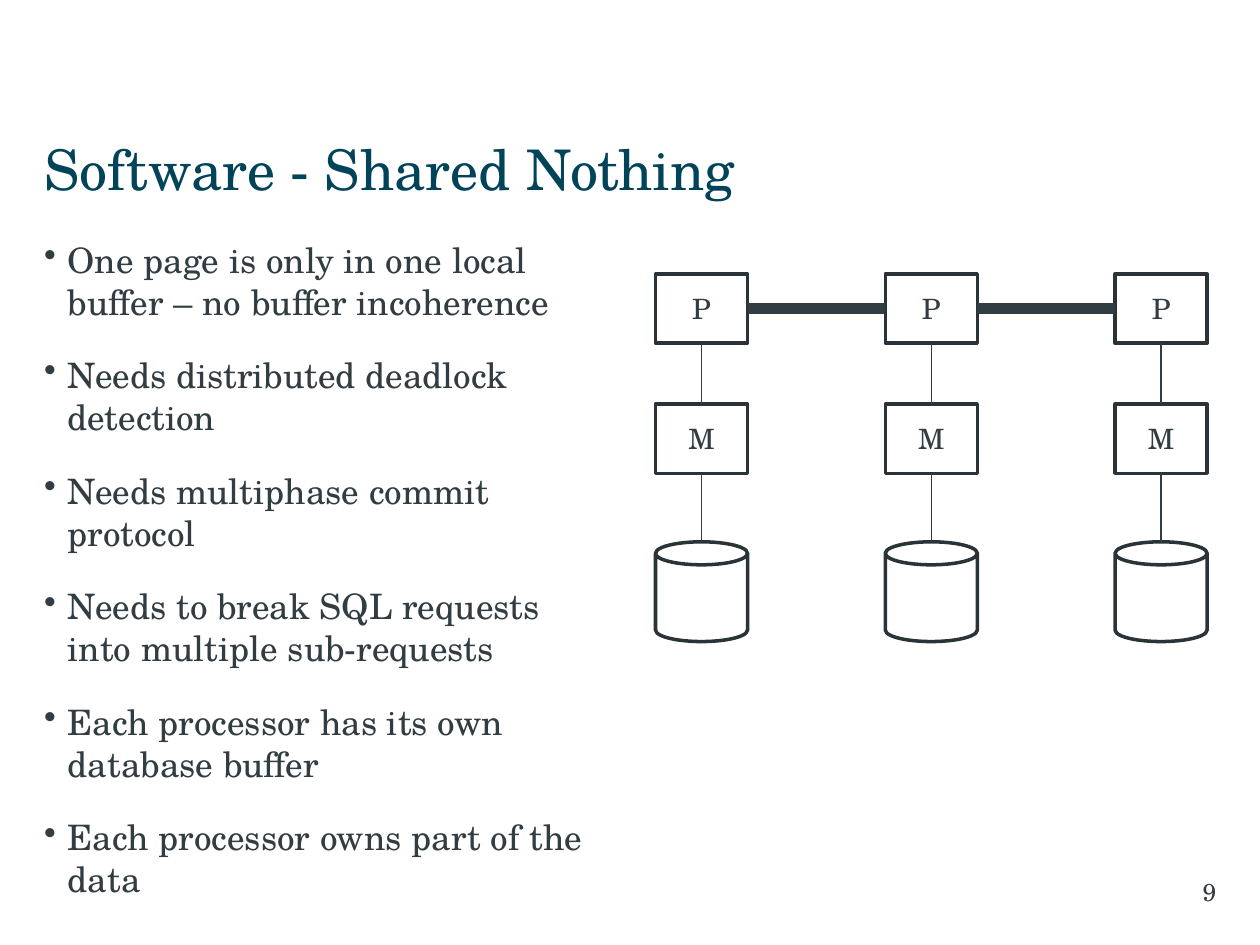
import pptx
import pptx.util
import pptx.dml.color
import pptx.enum.shapes
import pptx.enum.text
import pptx.oxml
import pptx.oxml.ns

Pt = pptx.util.Pt
Shape = pptx.enum.shapes.MSO_SHAPE
Align = pptx.enum.text.PP_ALIGN
Anchor = pptx.enum.text.MSO_ANCHOR

BULLETS = [
    "One page is only in one local buffer – no buffer incoherence",
    "Needs distributed deadlock detection",
    "Needs multiphase commit protocol",
    "Needs to break SQL requests into multiple sub-requests",
    "Each processor has its own database buffer",
    "Each processor owns part of the data",
]
COLUMN_LEFT, COLUMN_STEP, COLUMN_COUNT = 374.6, 131.3, 3
NODE_WIDTH, NODE_HEIGHT, DISK_HEIGHT = 52.6, 39.5, 57
PROCESSOR_TOP, MEMORY_TOP, DISK_TOP = 156.5, 231, 309.6
TOP, LEFT, BOTTOM, RIGHT = range(4)


def color(value):
    return pptx.dml.color.RGBColor.from_string(value)


def apply(target, values):
    for name, value in values.items():
        setattr(target, name, value)


class SlideBuilder:
    font = "TeX Gyre Schola"
    title_color = "014359"
    text_color = "323D43"
    outline_color = "293338"
    fill_color = "FFFFFF"

    def __init__(self, slide):
        self.slide = slide

    def place(self, shape, left, top, width, height):
        box = {"left": left, "top": top, "width": width, "height": height}
        apply(shape, {name: Pt(value) for name, value in box.items()})

    def set_text(self, shape, texts, size, text_color, frame_format, paragraph_format):
        frame = shape.text_frame
        frame.text = "\n".join(texts)
        apply(frame, {"word_wrap": True, "margin_top": Pt(3.6), "margin_bottom": Pt(3.6), **frame_format})
        for paragraph in frame.paragraphs:
            apply(paragraph, paragraph_format)
            for run in paragraph.runs:
                apply(run.font, {"name": self.font, "size": Pt(size)})
                run.font.color.rgb = color(text_color)

    def title(self, text, *box):
        shape = self.slide.shapes.title
        self.place(shape, *box)
        frame_format = {"margin_left": 0, "vertical_anchor": Anchor.MIDDLE}
        self.set_text(shape, [text], 32, self.title_color, frame_format, {"alignment": Align.LEFT})

    def text_box(self, texts, size, box, frame_format, paragraph_format):
        shape = self.slide.shapes.add_textbox(*map(Pt, box))
        self.set_text(shape, texts, size, self.text_color, frame_format, paragraph_format)
        return shape

    def bullets(self, texts, *box):
        shape = self.text_box(texts, 20, box, {"margin_left": 0}, {"space_after": Pt(18)})
        for paragraph in shape.text_frame.paragraphs:
            properties = paragraph._p.get_or_add_pPr()
            properties.set("marL", str(Pt(13.5)))
            properties.set("indent", str(-Pt(13.5)))
            properties.append(pptx.oxml.parse_xml(
                f'<a:buChar {pptx.oxml.ns.nsdecls("a")} char="•"/>'))

    def page_number(self, text, *box):
        self.text_box([text], 14, box, {"margin_right": 0}, {"alignment": Align.RIGHT})

    def node(self, kind, left, top, height, label=None):
        shape = self.slide.shapes.add_shape(kind, Pt(left), Pt(top), Pt(NODE_WIDTH), Pt(height))
        shape.shadow.inherit = False
        shape.fill.solid()
        shape.fill.fore_color.rgb = color(self.fill_color)
        shape.line.color.rgb = color(self.outline_color)
        shape.line.width = Pt(2)
        if label:
            self.set_text(shape, [label], 16, self.text_color,
                          {"vertical_anchor": Anchor.MIDDLE}, {"alignment": Align.CENTER})
        return shape

    def link(self, start, start_site, end, end_site, width):
        connector = self.slide.shapes.add_connector(
            pptx.enum.shapes.MSO_CONNECTOR.STRAIGHT, 0, 0, 0, 0)
        connector.begin_connect(start, start_site)
        if end.auto_shape_type == Shape.RECTANGLE:
            connector.end_connect(end, end_site)
        else:
            connector.end_x = end.left + end.width // 2
            connector.end_y = end.top
        connector.line.color.rgb = color(self.text_color)
        connector.line.width = Pt(width)
        connector._element.spPr.append(pptx.oxml.parse_xml(
            f'<a:effectLst {pptx.oxml.ns.nsdecls("a")}/>'))


def main():
    presentation = pptx.Presentation()
    apply(presentation, {"slide_width": Pt(720), "slide_height": Pt(540)})
    builder = SlideBuilder(presentation.slides.add_slide(presentation.slide_layouts[5]))

    builder.title("Software - Shared Nothing", 25.2, 70.5, 669, 51)
    builder.bullets(BULLETS, 25.2, 132.5, 322.5, 353.5)
    builder.page_number("9", 556.5, 497.5, 138.5, 24.5)

    previous = None
    for column in range(COLUMN_COUNT):
        left = COLUMN_LEFT + column * COLUMN_STEP
        processor = builder.node(Shape.RECTANGLE, left, PROCESSOR_TOP, NODE_HEIGHT, "P")
        memory = builder.node(Shape.RECTANGLE, left, MEMORY_TOP, NODE_HEIGHT, "M")
        disk = builder.node(Shape.CAN, left, DISK_TOP, DISK_HEIGHT)
        builder.link(processor, BOTTOM, memory, TOP, 0.75)
        builder.link(memory, BOTTOM, disk, TOP, 0.75)
        if previous:
            builder.link(previous, RIGHT, processor, LEFT, 6)
        previous = processor

    presentation.save("out.pptx")


if __name__ == "__main__":
    main()
